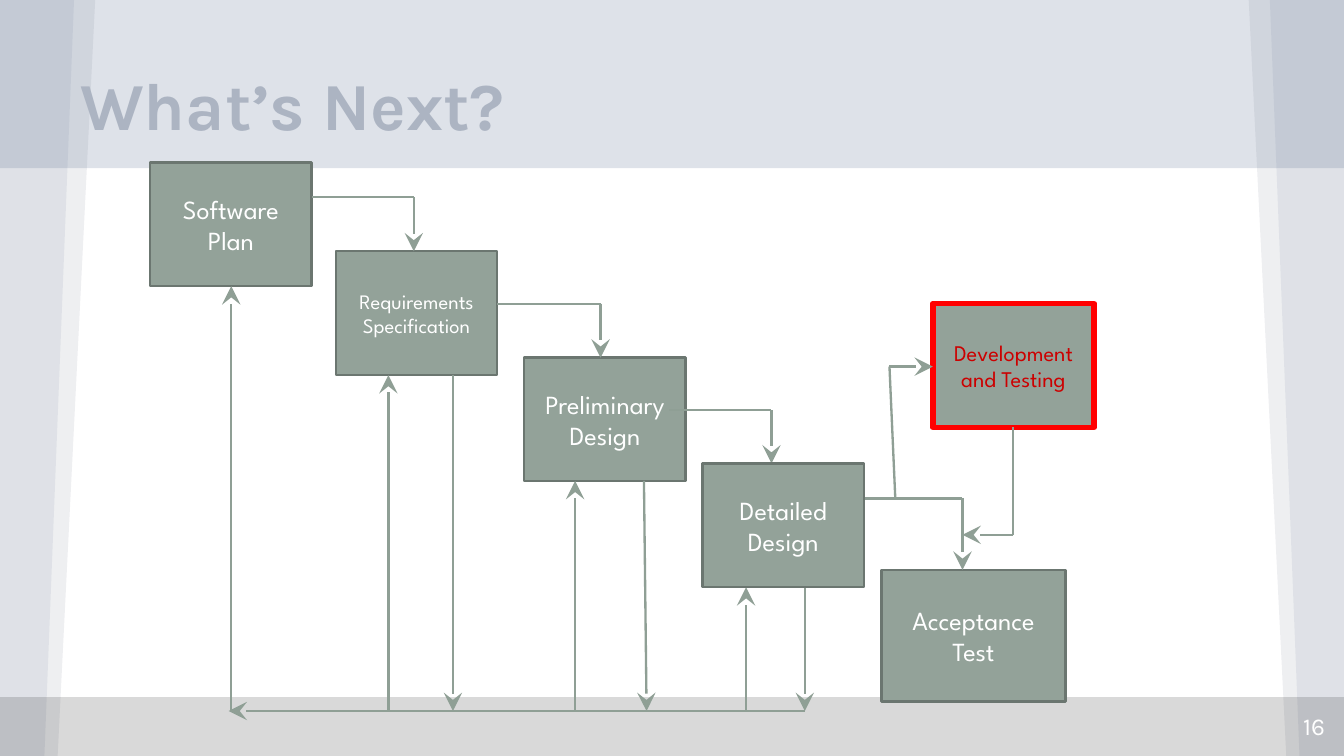
"""Build the "What's Next?" slide, a waterfall of software project phases."""
from itertools import pairwise

from lxml import etree
from pptx import Presentation
from pptx import util as u
from pptx.dml.color import RGBColor
from pptx.enum import shapes, text
from pptx.oxml.ns import qn

WIDTH, HEIGHT = 25.4, 14.29
BAR_TOP, BASE = 13.18, 13.44
BOX_WIDTH, BOX_HEIGHT = 3.05, 2.34
SAGE, SAGE_EDGE, SAGE_LINE = "93A299", "6B7670", "8F9F95"
WHITE, RED = "FFFFFF", "FF0000"

BANDS = [
    (0, 3.18, "5C6E95", 20),
    (BAR_TOP, HEIGHT - BAR_TOP, "000000", 15),
]
SIDES = [(1.8, 1.09, "5A6378"), (1.4, 0.84, "5C6E95")]
PHASES = [
    ("Software Plan", 2.84, 3.07, 14),
    ("Requirements Specification", 6.35, 4.75, 11),
    ("Preliminary Design", 9.91, 6.76, 14),
    ("Detailed Design", 13.28, 8.76, 14),
]
STEPS = [
    [(5.89, 3.73), (7.82, 3.73), (7.82, 4.75)],
    [(9.4, 5.74), (11.35, 5.74), (11.35, 6.76)],
    [(12.65, 7.75), (14.58, 7.75), (14.58, 8.76)],
    [(16.26, 9.42), (18.19, 9.42), (18.19, 10.77)],
]
BRANCHES = [
    [(16.92, 9.42), (16.81, 6.93), (17.63, 6.93)],
    [(19.15, 8.08), (19.15, 10.11), (18.19, 10.11)],
]
FEEDBACK = [
    [(15.21, BASE), (4.32, BASE)],
    [(4.37, BASE), (4.37, 5.41)],
    [(7.34, BASE), (7.34, 7.09)],
    [(8.56, 7.09), (8.56, BASE)],
    [(10.87, BASE), (10.87, 9.09)],
    [(12.17, 9.09), (12.22, BASE)],
    [(14.1, BASE), (14.1, 11.1)],
    [(15.21, 11.1), (15.21, BASE)],
]


def color(value):
    return RGBColor.from_string(value)


def paint(shape, fill, opacity=100):
    shape.shadow.inherit = False
    shape.line.fill.background()
    shape.fill.solid()
    shape.fill.fore_color.rgb = color(fill)
    if opacity < 100:
        tint = shape.fill._xPr.find(".//" + qn("a:srgbClr"))
        etree.SubElement(tint, qn("a:alpha"), val=str(opacity * 1000))


def add_rectangle(page, left, top, width, height):
    return page.shapes.add_shape(
        shapes.MSO_SHAPE.RECTANGLE, u.Cm(left), u.Cm(top), u.Cm(width), u.Cm(height)
    )


def write(box, words, size, font, ink, align, anchor, bold=False):
    frame = box.text_frame
    frame.text = words
    frame.word_wrap = True
    frame.vertical_anchor = anchor
    para = frame.paragraphs[0]
    para.alignment = align
    span = para.runs[0]
    span.font.size = u.Pt(size)
    span.font.name = font
    span.font.bold = bold
    span.font.color.rgb = color(ink)


def add_label(page, place, *style, **options):
    box = page.shapes.add_textbox(*map(u.Cm, place))
    write(box, *style, **options)
    frame = box.text_frame
    frame.margin_top = frame.margin_bottom = u.Cm(0.25)


def add_side(page, top_width, foot_width, fill, mirrored):
    corners = [(0, 0), (top_width, 0), (foot_width, HEIGHT), (0, HEIGHT)]
    if mirrored:
        corners = [(WIDTH - x, y) for x, y in corners]
    points = [(u.Cm(x), u.Cm(y)) for x, y in corners]
    builder = page.shapes.build_freeform(*points[0])
    builder.add_line_segments(points[1:], close=True)
    paint(builder.convert_to_shape(), fill, 10)


def add_phase(page, words, left, top, size, width=BOX_WIDTH, height=BOX_HEIGHT,
              ink=WHITE, edge=SAGE_EDGE, weight=1.25):
    box = add_rectangle(page, left, top, width, height)
    paint(box, SAGE)
    box.line.color.rgb = color(edge)
    box.line.width = u.Pt(weight)
    write(box, words, size, "League Spartan", ink,
          text.PP_ALIGN.CENTER, text.MSO_ANCHOR.MIDDLE)


def add_route(page, points):
    for start, end in pairwise(points):
        line = page.shapes.add_connector(
            shapes.MSO_CONNECTOR.STRAIGHT, *map(u.Cm, start + end)
        )
        line.line.color.rgb = color(SAGE_LINE)
        line.line.width = u.Pt(1.25)
        etree.SubElement(line._element.spPr, qn("a:effectLst"))
    etree.SubElement(line.line._get_or_add_ln(), qn("a:tailEnd"),
                     type="stealth", w="lg", len="lg")


def main():
    deck = Presentation()
    deck.slide_width, deck.slide_height = u.Cm(WIDTH), u.Cm(HEIGHT)
    page = deck.slides.add_slide(deck.slide_layouts[6])

    (head, foot) = BANDS
    paint(add_rectangle(page, 0, head[0], WIDTH, head[1]), *head[2:])
    for mirrored in (False, True):
        for side in SIDES:
            add_side(page, *side, mirrored)
    paint(add_rectangle(page, 0, foot[0], WIDTH, foot[1]), *foot[2:])

    add_label(page, (1.27, 0.58, 22.86, 2.39), "What’s Next?", 36, "Karla", "ACB4C2",
              text.PP_ALIGN.LEFT, text.MSO_ANCHOR.BOTTOM, bold=True)
    for phase in PHASES[:-1]:
        add_phase(page, *phase)
    add_phase(page, "Acceptance Test", 16.66, 10.77, 14, 3.48, 2.49)
    add_phase(page, "Development and Testing", 17.63, 5.74, 12,
              ink="CC0000", edge=RED, weight=3)
    for route in STEPS + BRANCHES + FEEDBACK:
        add_route(page, route)
    add_label(page, (23.77, BAR_TOP, 1.52, 1.09), "16", 13, "Karla", WHITE,
              text.PP_ALIGN.RIGHT, text.MSO_ANCHOR.MIDDLE)
    add_phase(page, *PHASES[-1])
    deck.save("out.pptx")


if __name__ == "__main__":
    main()
